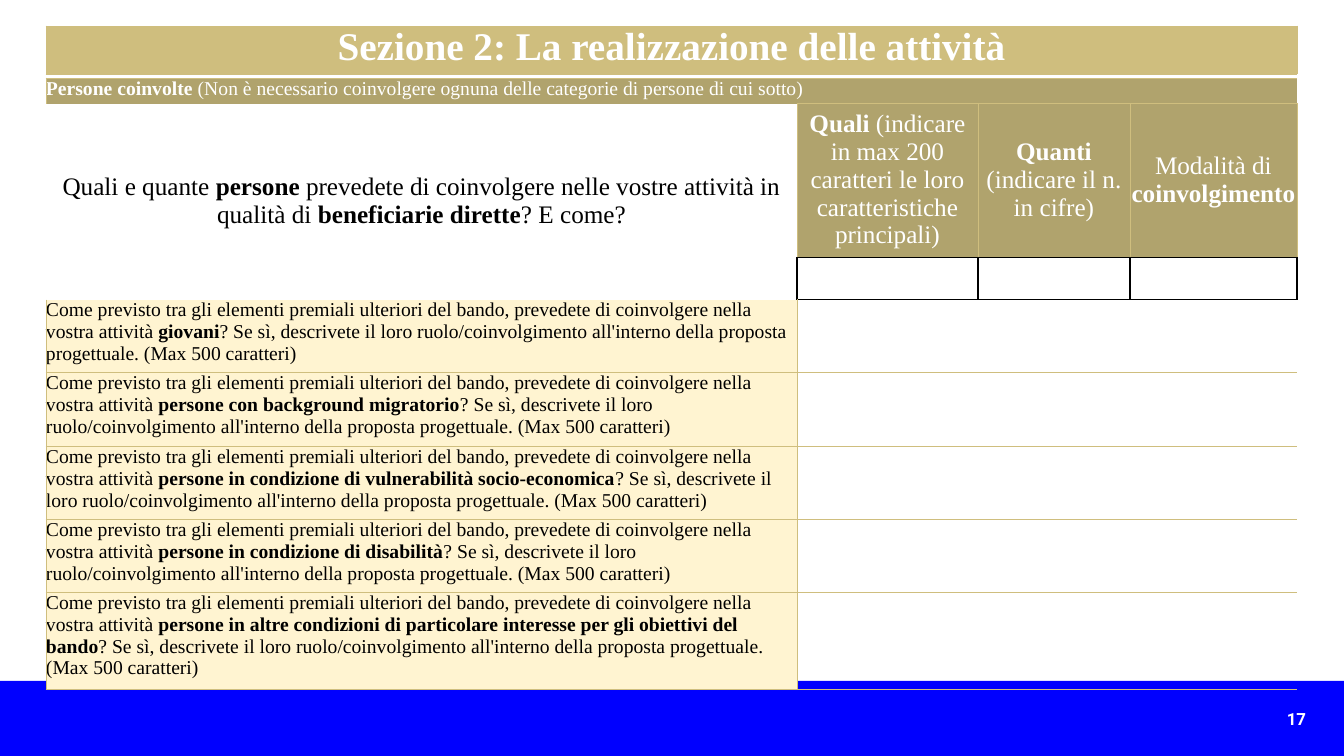
from lxml import etree
from pptx import Presentation
from pptx.dml.color import RGBColor
from pptx.enum.shapes import MSO_SHAPE as Shape
from pptx.enum.text import MSO_ANCHOR as Anchor, PP_ALIGN as Align
from pptx.oxml.ns import qn
from pptx.util import Pt

EMU_PER_PX = 914400 / 100.8
NO_GRID_STYLE = "{2D5ABB26-0587-4C30-8999-92F81FD0307C}"
SERIF, SANS = "Times New Roman", "Roboto"
BLACK = RGBColor(0x00, 0x00, 0x00)
WHITE = RGBColor(0xFF, 0xFF, 0xFF)
BLUE = RGBColor(0x00, 0x00, 0xFF)
GOLD = RGBColor(0xCF, 0xBE, 0x7E)
OLIVE = RGBColor(0xB0, 0xA3, 0x6D)
CREAM = RGBColor(0xFF, 0xF4, 0xD1)

COLUMN_HEADS = [
    "**Quali** (indicare in max 200 caratteri le loro caratteristiche principali)",
    "**Quanti** (indicare il n. in cifre)",
    "Modalità di **coinvolgimento**",
]
GROUPS = [
    "giovani",
    "persone con background migratorio",
    "persone in condizione di vulnerabilità socio-economica",
    "persone in condizione di disabilità",
    "persone in altre condizioni di particolare interesse per gli obiettivi del bando",
]
QUESTION = (
    "Come previsto tra gli elementi premiali ulteriori del bando, prevedete di "
    "coinvolgere nella vostra attività **{}**? Se sì, descrivete il loro "
    "ruolo/coinvolgimento all'interno della proposta progettuale. (Max 500 caratteri)"
)


def px(length):
    """Turn whole pixels into EMU."""
    return round(length * EMU_PER_PX)


def write(frame, text, size=14, color=BLACK, font=SERIF, align=Align.LEFT):
    """Write text into a frame, with **bold** parts."""
    paragraph = frame.paragraphs[0]
    paragraph.alignment = align
    for index, part in enumerate(text.split("**")):
        if part:
            run = paragraph.add_run()
            run.text = part
            run.font.name = font
            run.font.size = Pt(size)
            run.font.bold = index % 2 == 1
            run.font.color.rgb = color


class FormSlide:
    """Draws the parts of one form slide in a shared style."""

    def __init__(self, slide):
        """Keep the slide to draw on."""
        self.slide = slide

    def band(self, left, top, width, height, color):
        """Draw a plain filled rectangle."""
        band = self.slide.shapes.add_shape(
            Shape.RECTANGLE, px(left), px(top), px(width), px(height))
        band.shadow.inherit = False
        band.fill.solid()
        band.fill.fore_color.rgb = color
        band.line.fill.background()

    def label(self, left, top, width, height, text, **style):
        """Place a wrapped text box."""
        frame = self.slide.shapes.add_textbox(
            px(left), px(top), px(width), px(height)).text_frame
        frame.word_wrap = True
        write(frame, text, **style)

    def table(self, left, top, widths, heights):
        """Add a table without banding or grid."""
        table = self.slide.shapes.add_table(
            len(heights), len(widths), px(left), px(top),
            px(sum(widths)), px(sum(heights))).table
        table.first_row = table.horz_banding = False
        table._tbl.tblPr.find(qn("a:tableStyleId")).text = NO_GRID_STYLE
        for column, width in zip(table.columns, widths):
            column.width = px(width)
        for row, height in zip(table.rows, heights):
            row.height = px(height)
        for cell in table.iter_cells():
            cell.fill.background()
        return table

    def cell(self, cell, text="", fill=None, bottom=2, middle=False, borders=(), **style):
        """Fill, write and border one cell."""
        if fill is not None:
            cell.fill.solid()
            cell.fill.fore_color.rgb = fill
        if text:
            cell.margin_left = cell.margin_right = cell.margin_top = 0
            cell.margin_bottom = px(bottom)
            cell.vertical_anchor = Anchor.MIDDLE if middle else Anchor.TOP
            write(cell.text_frame, text, **style)
        for index, (side, color, weight) in enumerate(borders):
            line = etree.Element(qn("a:ln" + side), w=str(Pt(weight)))
            solid = etree.SubElement(line, qn("a:solidFill"))
            etree.SubElement(solid, qn("a:srgbClr"), val=str(color))
            cell._tc.get_or_add_tcPr().insert(index, line)


def edges(sides, color=GOLD, weight=0.5):
    """List borders of one look, sides given in L, R, T, B order."""
    return [(side, color, weight) for side in sides]


def main():
    """Build the form slide and save it."""
    deck = Presentation()
    deck.slide_width, deck.slide_height = px(1344), px(756)
    form = FormSlide(deck.slides.add_slide(deck.slide_layouts[6]))

    form.band(0, 681, 1344, 75, BLUE)
    form.label(889, 704, 427, 30, "**17**", size=12, color=WHITE, font=SANS,
               align=Align.RIGHT)

    heading = form.table(46, 26, [1251], [48])
    form.cell(heading.cell(0, 0), "**Sezione 2: La realizzazione delle attività**",
              fill=GOLD, bottom=0, borders=edges("LRTB"), size=28, color=WHITE,
              align=Align.CENTER)

    people = form.table(46, 78, [751, 181, 152, 167],
                        [25, 154, 42, 73, 74, 73, 73, 97])
    people.cell(0, 0).merge(people.cell(0, 3))
    form.cell(people.cell(0, 0),
              "**Persone coinvolte** (Non è necessario coinvolgere ognuna delle "
              "categorie di persone di cui sotto)",
              fill=OLIVE, borders=edges("LT"), color=WHITE)

    people.cell(1, 0).merge(people.cell(2, 0))
    form.cell(people.cell(1, 0),
              "Quali e quante **persone** prevedete di coinvolgere nelle vostre "
              "attività in qualità di **beneficiarie dirette**? E come?",
              middle=True, borders=edges("R"), size=18, align=Align.CENTER)

    for column, head in enumerate(COLUMN_HEADS, start=1):
        form.cell(people.cell(1, column), head, fill=OLIVE, middle=True,
                  borders=edges("LRT") + edges("B", BLACK, 1),
                  size=18, color=WHITE, align=Align.CENTER)
        form.cell(people.cell(2, column), borders=edges("LRTB", BLACK, 1))

    for row, group in enumerate(GROUPS, start=3):
        form.cell(people.cell(row, 0), QUESTION.format(group), fill=CREAM,
                  borders=edges("LRB" if row == 3 else "LRTB"))
        people.cell(row, 1).merge(people.cell(row, 3))
        ceiling = edges("T", BLACK, 1) if row == 3 else edges("T")
        for column in range(1, 4):
            form.cell(people.cell(row, column),
                      borders=edges("L" if column == 1 else "") + ceiling + edges("B"))

    deck.save("out.pptx")


if __name__ == "__main__":
    main()
